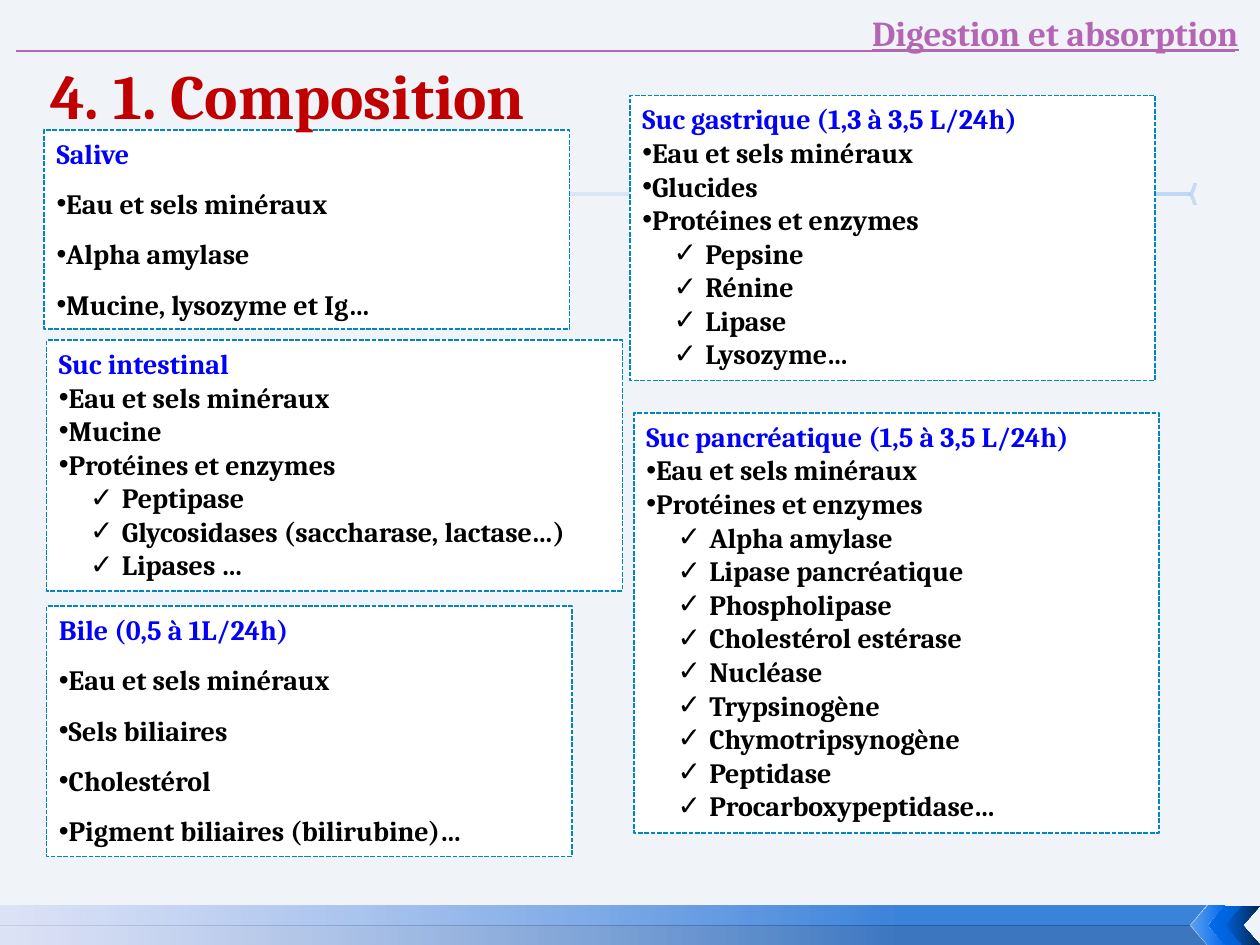
from lxml.etree import SubElement
from pptx import Presentation
from pptx.dml.color import RGBColor
from pptx.enum.dml import MSO_LINE
from pptx.enum.shapes import MSO_CONNECTOR, MSO_SHAPE
from pptx.enum.text import MSO_ANCHOR, MSO_AUTO_SIZE, PP_ALIGN
from pptx.oxml.ns import qn
from pptx.util import Cm, Pt

FONT = "Cambria"
WATER = "Eau et sels minéraux"
ENZYMES = "Protéines et enzymes"

# box (left, top, width, height), title, items, sub-items, line spacing
CARDS = [
    ((0.89, 2.62, 10.59, 4.01), "Salive",
     [WATER, "Alpha amylase", "Mucine, lysozyme et Ig…"], [], 1.5),
    ((12.78, 8.33, 10.59, 8.46), "Suc pancréatique (1,5 à 3,5 L/24h)",
     [WATER, ENZYMES],
     ["Alpha amylase", "Lipase pancréatique", "Phospholipase",
      "Cholestérol estérase", "Nucléase", "Trypsinogène",
      "Chymotripsynogène", "Peptidase", "Procarboxypeptidase…"], 1),
    ((12.7, 1.93, 10.59, 5.74), "Suc gastrique (1,3 à 3,5 L/24h)",
     [WATER, "Glucides", ENZYMES],
     ["Pepsine", "Rénine", "Lipase", "Lysozyme…"], 1),
    ((0.94, 6.86, 11.61, 5.05), "Suc intestinal",
     [WATER, "Mucine", ENZYMES],
     ["Peptipase", "Glycosidases (saccharase, lactase…)", "Lipases …"], 1),
    ((0.94, 12.22, 10.59, 5.05), "Bile (0,5 à 1L/24h)",
     [WATER, "Sels biliaires", "Cholestérol",
      "Pigment biliaires (bilirubine)…"], [], 1.5),
]


def color(text):
    return RGBColor.from_string(text)


def blend(shape, *stops):
    """Fill from right to left with two (position, colour, opacity) stops."""
    shape.shadow.inherit = False
    shape.line.fill.background()
    shape.fill.gradient()
    shape.fill.gradient_angle = 180
    nodes = shape._element.spPr.iter(qn("a:gs"))
    for stop, node, (place, tint, alpha) in zip(
            shape.fill.gradient_stops, nodes, stops):
        stop.position = place
        stop.color.rgb = color(tint)
        if alpha < 100:
            SubElement(node[0], qn("a:alpha"), val=str(alpha * 1000))


def add_shape(slide, kind, box):
    return slide.shapes.add_shape(kind, *map(Cm, box))


def add_arrow(slide, box, *stops):
    arrow = add_shape(slide, MSO_SHAPE.CHEVRON, box)
    arrow._element.spPr.xfrm.set("flipH", "1")
    blend(arrow, *stops)


def add_footer(slide, left, top, width, height):
    mid, right = top + height / 2, left + width
    for edge, tint in ((top + height, "004EAF"), (top, "005ED1")):
        path = slide.shapes.build_freeform(Cm(right - 1.07), Cm(edge))
        path.add_line_segments([(Cm(left), Cm(edge)), (Cm(left), Cm(mid)),
                                (Cm(right - 1.42), Cm(mid))])
        blend(path.convert_to_shape(), (0.25, tint, 75), (1, "CCD4F8", 50))
    tints = [("006AED", 60, "006AED"), ("006AED", 100, "005ED1"),
             ("005ED1", 100, "002757")]
    for i, (first, alpha, last) in enumerate(tints):
        add_arrow(slide, (right - 1.4 + 0.355 * i, top, 0.69, height),
                  (0, first, alpha), (1, last, 100))


def add_trail(slide, left, top, width, height):
    tip = 0.15
    add_arrow(slide, (left + width - tip, top, tip, height),
              (0, "006AED", 20), (1, "006AED", 15))
    bar = add_shape(slide, MSO_SHAPE.RECTANGLE,
                    (left, top + height / 2 - 0.03, width - tip, 0.05))
    blend(bar, (0, "006AED", 20), (1, "006AED", 4))


def style(para, size, tint):
    font = para.font
    font.name, font.size, font.bold = FONT, Pt(size), True
    font.color.rgb = color(tint)


def bullet(para, sign, margin=0, indent=0):
    props = para._p.get_or_add_pPr()
    props.set("marL", str(Cm(margin)))
    props.set("indent", str(Cm(indent)))
    SubElement(props, qn("a:buFont"), typeface="Arial")
    SubElement(props, qn("a:buChar"), char=sign)


def add_card(slide, box, title, items, subs, spacing):
    card = add_shape(slide, MSO_SHAPE.RECTANGLE, box)
    card.shadow.inherit = False
    card.fill.solid()
    card.fill.fore_color.rgb = color("FFFFFF")
    card.line.color.rgb = color("0087BF")
    card.line.width = Pt(0.9)
    card.line.dash_style = MSO_LINE.SQUARE_DOT
    frame = card.text_frame
    frame.word_wrap = True
    frame.auto_size = MSO_AUTO_SIZE.SHAPE_TO_FIT_TEXT
    frame.vertical_anchor = MSO_ANCHOR.TOP
    head = frame.paragraphs[0]
    head.text = title
    head.alignment = PP_ALIGN.LEFT
    style(head, 16, "0000FB")
    for i, text in enumerate(items + subs):
        para = frame.add_paragraph()
        para.text = text
        para.alignment = PP_ALIGN.LEFT
        para.line_spacing = float(spacing)
        if i < len(items):
            bullet(para, "•")
        else:
            para.level = 1
            bullet(para, "✓", 1.27, -0.64)
        style(para, 16, "000000")


def add_label(slide, box, text, size, tint):
    frame = slide.shapes.add_textbox(*map(Cm, box)).text_frame
    para = frame.paragraphs[0]
    para.text = text
    style(para, size, tint)
    return frame


def add_header(slide, left, top, width, height):
    tint = "B465B4"
    frame = add_label(slide, (left, top, width, height),
                      "Digestion et absorption", 20, tint)
    frame.word_wrap = True
    frame.vertical_anchor = MSO_ANCHOR.MIDDLE
    para = frame.paragraphs[0]
    para.alignment = PP_ALIGN.RIGHT
    para.font.underline = True
    level = Cm(top + 0.92)
    rule = slide.shapes.add_connector(
        MSO_CONNECTOR.STRAIGHT, Cm(left + 0.35), level,
        Cm(left + width - 0.32), level)
    rule.line.color.rgb = color(tint)
    rule.line.width = Pt(1.25)
    SubElement(rule._element.spPr, qn("a:effectLst"))


def main():
    deck = Presentation()
    deck.slide_width, deck.slide_height = Cm(25.4), Cm(19.05)
    slide = deck.slides.add_slide(deck.slide_layouts[6])
    back = slide.background.fill
    back.solid()
    back.fore_color.rgb = color("F0F3F7")
    add_footer(slide, 0, 18.26, 25.4, 0.79)
    add_trail(slide, 6.12, 3.71, 18.01, 0.41)
    for card in CARDS:
        add_card(slide, *card)
    title = add_label(slide, (0.76, 1.02, 11.07, 1.8),
                      "4. 1. Composition", 36, "C00000")
    title.word_wrap = False
    add_header(slide, -0.03, 0.1, 25.25, 1.12)
    deck.save("out.pptx")


if __name__ == "__main__":
    main()
